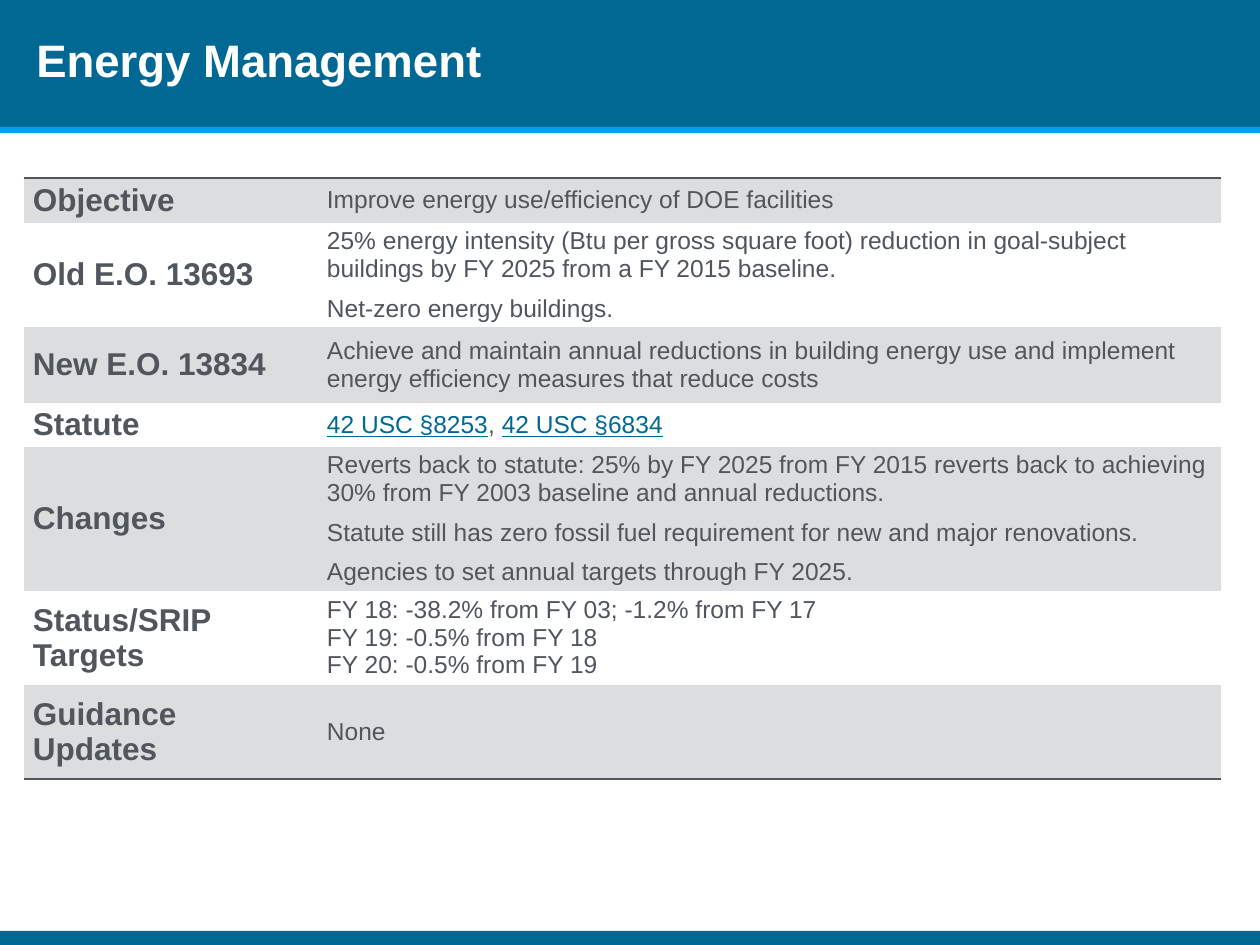
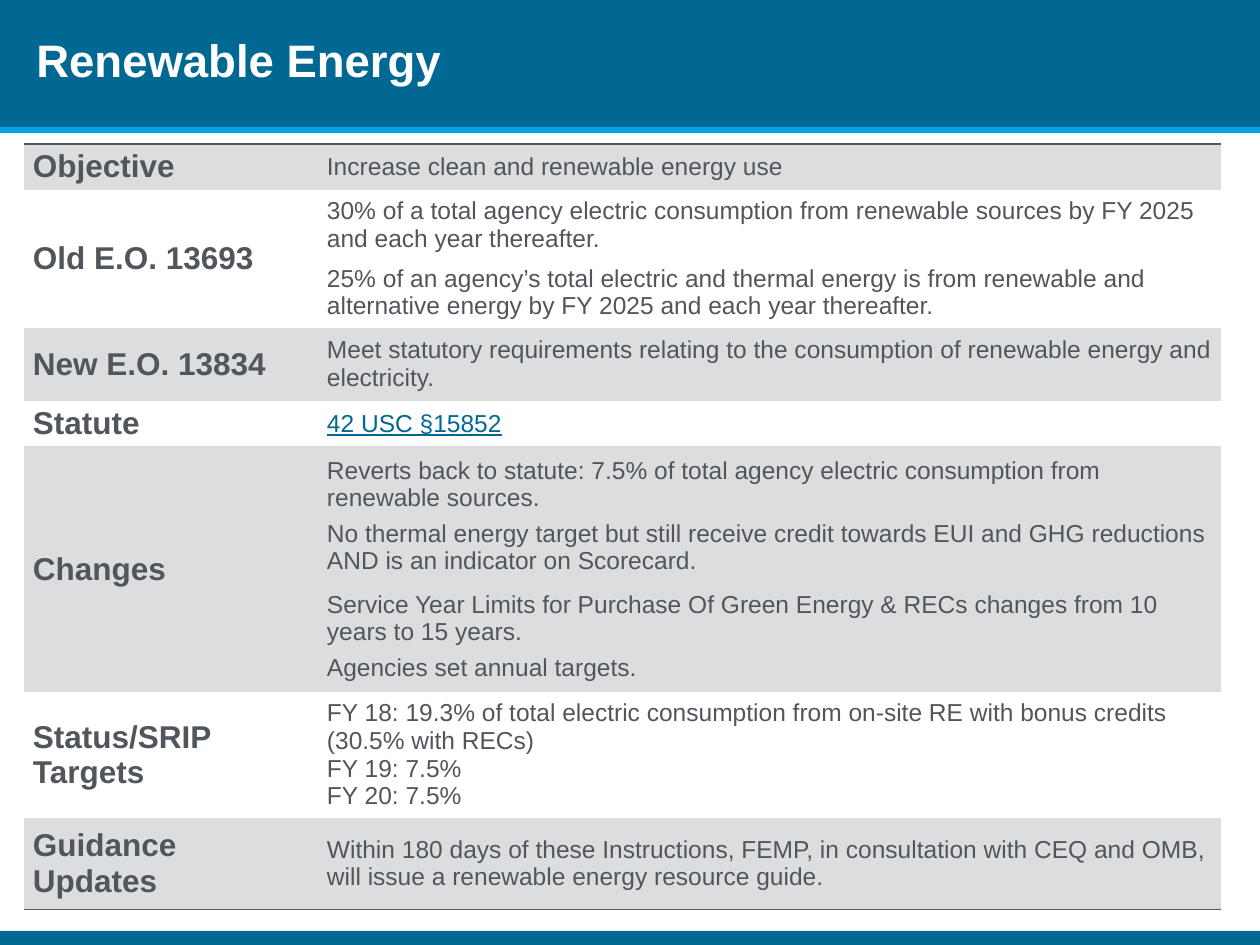
from lxml import etree
from pptx import Presentation
from pptx.dml.color import RGBColor
from pptx.enum.shapes import MSO_SHAPE
from pptx.enum.text import MSO_ANCHOR
from pptx.oxml.ns import qn
from pptx.util import Emu, Pt

RECTANGLE = MSO_SHAPE.RECTANGLE
MIDDLE = MSO_ANCHOR.MIDDLE
PX_PER_INCH = 126
FONT = "Arial"
BLUE, BRIGHT_BLUE, GREY, STRIPE, WHITE = "006892", "00A4E4", "50565C", "DCDDDE", "FFFFFF"
NO_STYLE = "{2D5ABB26-0587-4C30-8999-92F81FD0307C}"
BANDS = [(0, 127, BLUE), (931, 14, BLUE), (127, 6, BRIGHT_BLUE)]
LABELS = ["Objective", "Old E.O. 13693", "New E.O. 13834", "Statute", "Changes",
          "Status/SRIP Targets", "Guidance Updates"]
COLUMN_WIDTHS = [294, 903]

ENERGY_ROWS = [
    (45, [(0, "Improve energy use/efficiency of DOE facilities")]),
    (104, [(0, "25% energy intensity (Btu per gross square foot) reduction in goal-subject "
               "buildings by FY 2025 from a FY 2015 baseline."),
           (7, "Net-zero energy buildings.")]),
    (76, [(0, "Achieve and maintain annual reductions in building energy use and implement "
              "energy efficiency measures that reduce costs")]),
    (44, [(0, "42 USC §8253", ", ", "42 USC §6834")]),
    (144, [(0, "Reverts back to statute: 25% by FY 2025 from FY 2015 reverts back to achieving "
               "30% from FY 2003 baseline and annual reductions."),
           (7, "Statute still has zero fossil fuel requirement for new and major renovations."),
           (7, "Agencies to set annual targets through FY 2025.")]),
    (94, [(0, "FY 18: -38.2% from FY 03; -1.2% from FY 17"),
          (0, "FY 19: -0.5% from FY 18"),
          (0, "FY 20: -0.5% from FY 19")]),
    (94, [(0, "None")]),
]

RENEWABLE_ROWS = [
    (45, [(0, "Increase clean and renewable energy use")]),
    (136, [(0, "30% of a total agency electric consumption from renewable sources by FY 2025 "
               "and each year thereafter."),
           (7, "25% of an agency’s total electric and thermal energy is from renewable and "
               "alternative energy by FY 2025 and each year thereafter.")]),
    (73, [(0, "Meet statutory requirements relating to the consumption of renewable energy "
              "and electricity.")]),
    (45, [(0, "42 USC §15852")]),
    (233, [(0, "Reverts back to statute: 7.5% of total agency electric consumption from "
               "renewable sources."),
           (4.5, "No thermal energy target but still receive credit towards EUI and GHG "
                 "reductions AND is an indicator on Scorecard."),
           (9, "Service Year Limits for Purchase Of Green Energy & RECs changes from 10 "
               "years to 15 years."),
           (4.5, "Agencies set annual targets.")]),
    (120, [(0, "FY 18: 19.3% of total electric consumption from on-site RE with bonus credits "
               "(30.5% with RECs)"),
           (0, "FY 19: 7.5%"),
           (0, "FY 20: 7.5%")]),
    (92, [(0, "Within 180 days of these Instructions, FEMP, in consultation with CEQ and OMB, "
              "will issue a renewable energy resource guide.")]),
]


def px(length):
    return Emu(round(length * 914400 / PX_PER_INCH))


def rgb(color):
    return RGBColor.from_string(color)


def add_run(paragraph, text, size, color, bold=False, underline=False):
    run = paragraph.add_run()
    run.text = text
    font = run.font
    font.name, font.size, font.bold = FONT, Pt(size), bold
    font.color.rgb = rgb(color)
    if underline:
        font.underline = True


def add_band(slide, top, height, color):
    band = slide.shapes.add_shape(RECTANGLE, 0, px(top), px(1260), px(height))
    band.shadow.inherit = False
    band.fill.solid()
    band.fill.fore_color.rgb = rgb(color)
    band.line.fill.background()


def add_title(slide, title):
    frame = slide.shapes.add_textbox(px(24), 0, px(780), px(125)).text_frame
    frame.word_wrap = True
    frame.vertical_anchor = MIDDLE
    paragraph = frame.paragraphs[0]
    paragraph.line_spacing = Pt(28)
    add_run(paragraph, title, 26, WHITE, bold=True)


def add_border(cell, edge):
    border = etree.Element(qn(f"a:{edge}"), w=str(Pt(1)))
    fill = etree.SubElement(border, qn("a:solidFill"))
    etree.SubElement(fill, qn("a:srgbClr"), val=GREY)
    cell._tc.get_or_add_tcPr().insert(0, border)


def format_cell(cell, row_index):
    cell.vertical_anchor = MIDDLE
    cell.margin_left = cell.margin_right = px(9)
    cell.margin_top = cell.margin_bottom = px(4)
    if row_index % 2 == 0:
        cell.fill.solid()
        cell.fill.fore_color.rgb = rgb(STRIPE)
    else:
        cell.fill.background()
    if row_index == 0:
        add_border(cell, "lnT")
    if row_index == len(LABELS) - 1:
        add_border(cell, "lnB")


def write_details(cell, details):
    frame = cell.text_frame
    for index, (gap, *texts) in enumerate(details):
        paragraph = frame.add_paragraph() if index else frame.paragraphs[0]
        if gap:
            paragraph.space_before = Pt(gap)
        for text in texts:
            cited = text.startswith("42 USC")
            add_run(paragraph, text, 14, BLUE if cited else GREY, underline=cited)


def add_goal_table(slide, top, rows):
    height = sum(row_height for row_height, _ in rows)
    table = slide.shapes.add_table(len(rows), len(COLUMN_WIDTHS), px(24), px(top),
                                   px(sum(COLUMN_WIDTHS)), px(height)).table
    table.first_row = table.horz_banding = False
    table._tbl.tblPr.find(qn("a:tableStyleId")).text = NO_STYLE
    for column, width in zip(table.columns, COLUMN_WIDTHS):
        column.width = px(width)
    for index, (label, (row_height, details)) in enumerate(zip(LABELS, rows)):
        table.rows[index].height = px(row_height)
        label_cell, detail_cell = table.cell(index, 0), table.cell(index, 1)
        format_cell(label_cell, index)
        format_cell(detail_cell, index)
        add_run(label_cell.text_frame.paragraphs[0], label, 18, GREY, bold=True)
        write_details(detail_cell, details)


def add_goal_slide(deck, title, table_top, rows):
    slide = deck.slides.add_slide(deck.slide_layouts[6])
    for band in BANDS:
        add_band(slide, *band)
    add_goal_table(slide, table_top, rows)
    add_title(slide, title)


def main():
    deck = Presentation()
    deck.slide_width, deck.slide_height = px(1260), px(945)
    add_goal_slide(deck, "Energy Management", 178, ENERGY_ROWS)
    add_goal_slide(deck, "Renewable Energy", 144, RENEWABLE_ROWS)
    deck.save("out.pptx")


if __name__ == "__main__":
    main()
